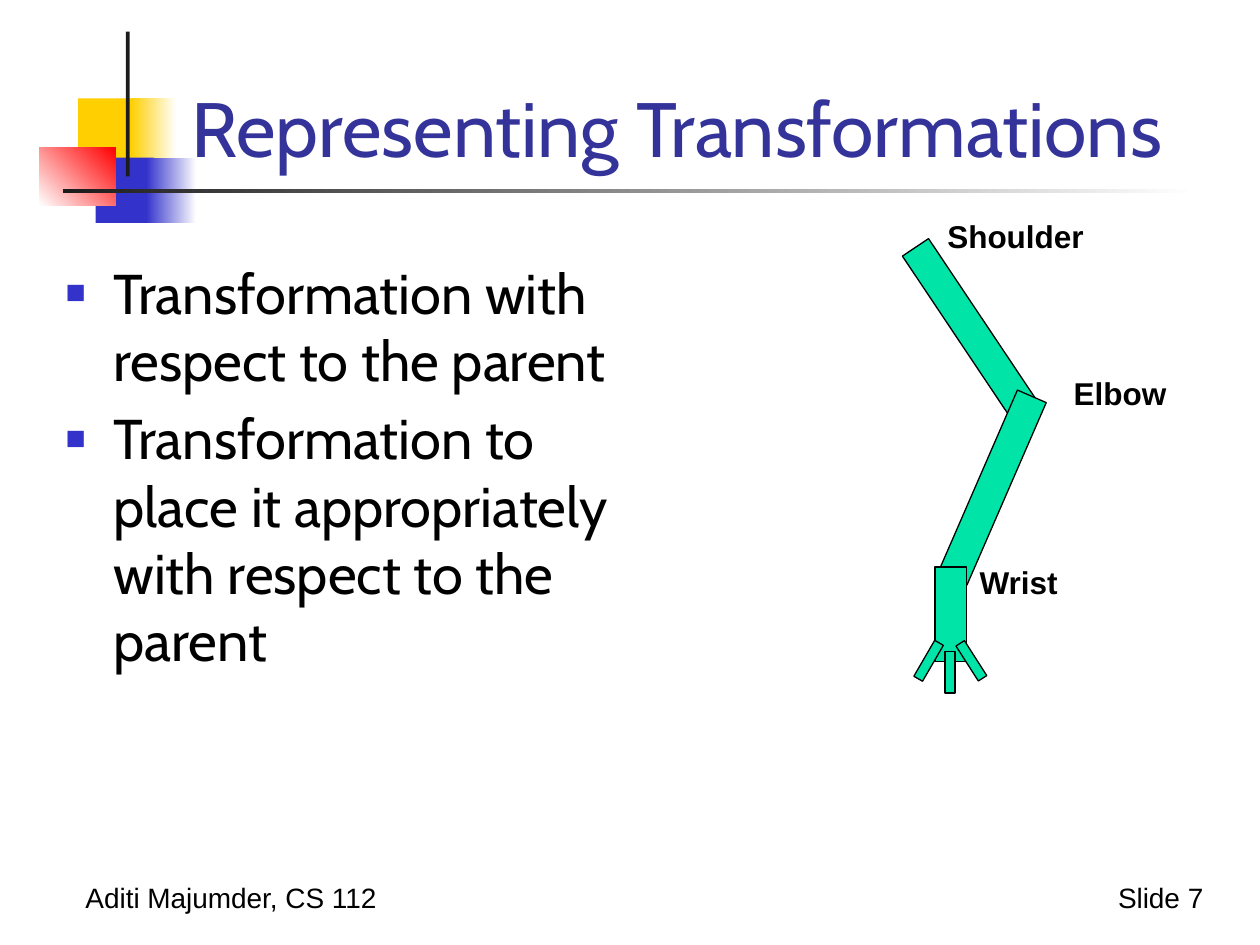
import dataclasses
import typing

import lxml.etree
import pptx
import pptx.dml.color
import pptx.enum.shapes
import pptx.enum.text
import pptx.oxml.ns
import pptx.util

Inches = pptx.util.Inches
Align = pptx.enum.text.PP_ALIGN
AutoSize = pptx.enum.text.MSO_AUTO_SIZE


@dataclasses.dataclass(frozen=True)
class Theme:
    title_font: str = "Cabin"
    label_font: str = "Arial"
    title_size: float = 44
    body_size: float = 32
    label_size: float = 18
    footer_size: float = 16
    outline: float = 0.75
    title: str = "333399"
    text: str = "000000"
    yellow: str = "FFCF01"
    blue: str = "3333CC"
    red: str = "FF0000"
    dark: str = "1C1C1C"
    white: str = "FFFFFF"
    limb: str = "00E4A8"


THEME = Theme()


class Box(typing.NamedTuple):
    left: float
    top: float
    width: float
    height: float

    def emu(self) -> list[int]:
        return [Inches(side) for side in self]


@dataclasses.dataclass(frozen=True)
class Decoration:
    box: Box
    start: str
    end: str | None = None
    angle: float = 0


@dataclasses.dataclass(frozen=True)
class Limb:
    box: Box
    rotation: float = 0


@dataclasses.dataclass(frozen=True)
class Label:
    text: str
    box: Box
    align: Align = Align.CENTER
    size: float = THEME.label_size
    bold: bool = True


DECORATIONS = [
    Decoration(Box(0.62, 0.78, 0.48, 0.52), THEME.yellow),
    Decoration(Box(1.04, 0.78, 0.36, 0.52), THEME.yellow, THEME.white),
    Decoration(Box(0.76, 1.25, 0.46, 0.52), THEME.blue),
    Decoration(Box(1.16, 1.25, 0.4, 0.52), THEME.blue, THEME.white),
    Decoration(Box(0.31, 1.17, 0.61, 0.46), THEME.white, THEME.red, 45),
    Decoration(Box(1, 0.25, 0.03, 1.15), THEME.dark),
    Decoration(Box(0.5, 1.5, 9, 0.03), THEME.dark, THEME.white),
]
FOOTERS = [
    Label("Aditi Majumder, CS 112", Box(0.58, 6.94, 2.55, 0.37), Align.LEFT, THEME.footer_size, False),
    Label("Slide 7", Box(8.62, 6.94, 1.03, 0.37), Align.RIGHT, THEME.footer_size, False),
]
BULLETS = [
    "Transformation with respect to the parent",
    "Transformation to place it appropriately with respect to the parent",
]
ARM = [
    Limb(Box(7.58, 1.83, 0.25, 1.58), 326.2),
    Limb(Box(7.75, 3.08, 0.25, 1.58), 23.5),
]
HAND = [
    Limb(Box(7.42, 4.5, 0.25, 0.75)),
    Limb(Box(7.33, 5.08, 0.08, 0.33), 30.1),
    Limb(Box(7.5, 5.17, 0.08, 0.33)),
    Limb(Box(7.67, 5.08, 0.08, 0.33), 327.4),
]
JOINTS = [
    Label("Shoulder", Box(7.42, 1.67, 1.28, 0.4)),
    Label("Elbow", Box(8.42, 2.92, 0.94, 0.4)),
    Label("Wrist", Box(7.67, 4.42, 0.83, 0.4)),
]


def rgb(code: str) -> pptx.dml.color.RGBColor:
    return pptx.dml.color.RGBColor.from_string(code)


def add_rectangle(shapes, box: Box):
    rectangle = shapes.add_shape(pptx.enum.shapes.MSO_SHAPE.RECTANGLE, *box.emu())
    rectangle.shadow.inherit = False
    return rectangle


def add_decoration(shapes, decoration: Decoration) -> None:
    block = add_rectangle(shapes, decoration.box)
    block.line.fill.background()
    if decoration.end is None:
        block.fill.solid()
        block.fill.fore_color.rgb = rgb(decoration.start)
        return
    block.fill.gradient()
    block.fill.gradient_angle = decoration.angle
    for stop, color in zip(block.fill.gradient_stops, (decoration.start, decoration.end)):
        stop.color.rgb = rgb(color)


def add_limb(shapes, limb: Limb) -> None:
    segment = add_rectangle(shapes, limb.box)
    segment.rotation = limb.rotation
    segment.fill.solid()
    segment.fill.fore_color.rgb = rgb(THEME.limb)
    segment.line.color.rgb = rgb(THEME.text)
    segment.line.width = pptx.util.Pt(THEME.outline)


def write(paragraph, text: str, font: str, size: float, color: str, bold: bool = False) -> None:
    run = paragraph.add_run()
    run.text = text
    run.font.name = font
    run.font.size = pptx.util.Pt(size)
    run.font.bold = bold
    run.font.color.rgb = rgb(color)


def add_label(shapes, label: Label) -> None:
    frame = shapes.add_textbox(*label.box.emu()).text_frame
    frame.word_wrap = False
    frame.auto_size = AutoSize.SHAPE_TO_FIT_TEXT
    paragraph = frame.paragraphs[0]
    paragraph.alignment = label.align
    write(paragraph, label.text, THEME.label_font, label.size, THEME.text, label.bold)


def place(placeholder, box: Box):
    """Move a placeholder to its box and return its text frame."""
    placeholder.left, placeholder.top, placeholder.width, placeholder.height = box.emu()
    placeholder.text_frame.auto_size = AutoSize.NONE
    return placeholder.text_frame


def set_square_bullet(paragraph) -> None:
    qn = pptx.oxml.ns.qn
    properties = paragraph._p.get_or_add_pPr()
    properties.set("marL", str(Inches(0.38)))
    properties.set("indent", str(Inches(-0.38)))
    color = lxml.etree.SubElement(properties, qn("a:buClr"))
    lxml.etree.SubElement(color, qn("a:srgbClr"), val=THEME.blue)
    lxml.etree.SubElement(properties, qn("a:buSzPct"), val="60000")
    lxml.etree.SubElement(properties, qn("a:buFont"), typeface=THEME.label_font)
    lxml.etree.SubElement(properties, qn("a:buChar"), char="■")


def main() -> None:
    deck = pptx.Presentation()
    deck.slide_width, deck.slide_height = Inches(10), Inches(7.5)
    slide = deck.slides.add_slide(deck.slide_layouts[1])
    shapes = slide.shapes
    title, body = shapes.title, slide.placeholders[1]

    # Background blocks and footer, kept behind the placeholders
    for decoration in DECORATIONS:
        add_decoration(shapes, decoration)
    for footer in FOOTERS:
        add_label(shapes, footer)
    for placeholder in (title, body):
        shapes._spTree.append(placeholder._element)

    # Title
    heading = place(title, Box(1.42, 0.25, 8.36, 1.17))
    heading.vertical_anchor = pptx.enum.text.MSO_ANCHOR.BOTTOM
    heading.paragraphs[0].alignment = Align.LEFT
    write(heading.paragraphs[0], "Representing Transformations",
          THEME.title_font, THEME.title_size, THEME.title)

    # Bullet list
    points = place(body, Box(0.42, 2, 4.75, 4.75))
    for index, bullet in enumerate(BULLETS):
        paragraph = points.add_paragraph() if index else points.paragraphs[0]
        set_square_bullet(paragraph)
        write(paragraph, bullet, THEME.title_font, THEME.body_size, THEME.text)

    # Arm with its joints, and the hand as a group
    for limb in ARM:
        add_limb(shapes, limb)
    for joint in JOINTS:
        add_label(shapes, joint)
    hand = shapes.add_group_shape()
    for limb in HAND:
        add_limb(hand.shapes, limb)

    deck.save("out.pptx")


if __name__ == "__main__":
    main()
